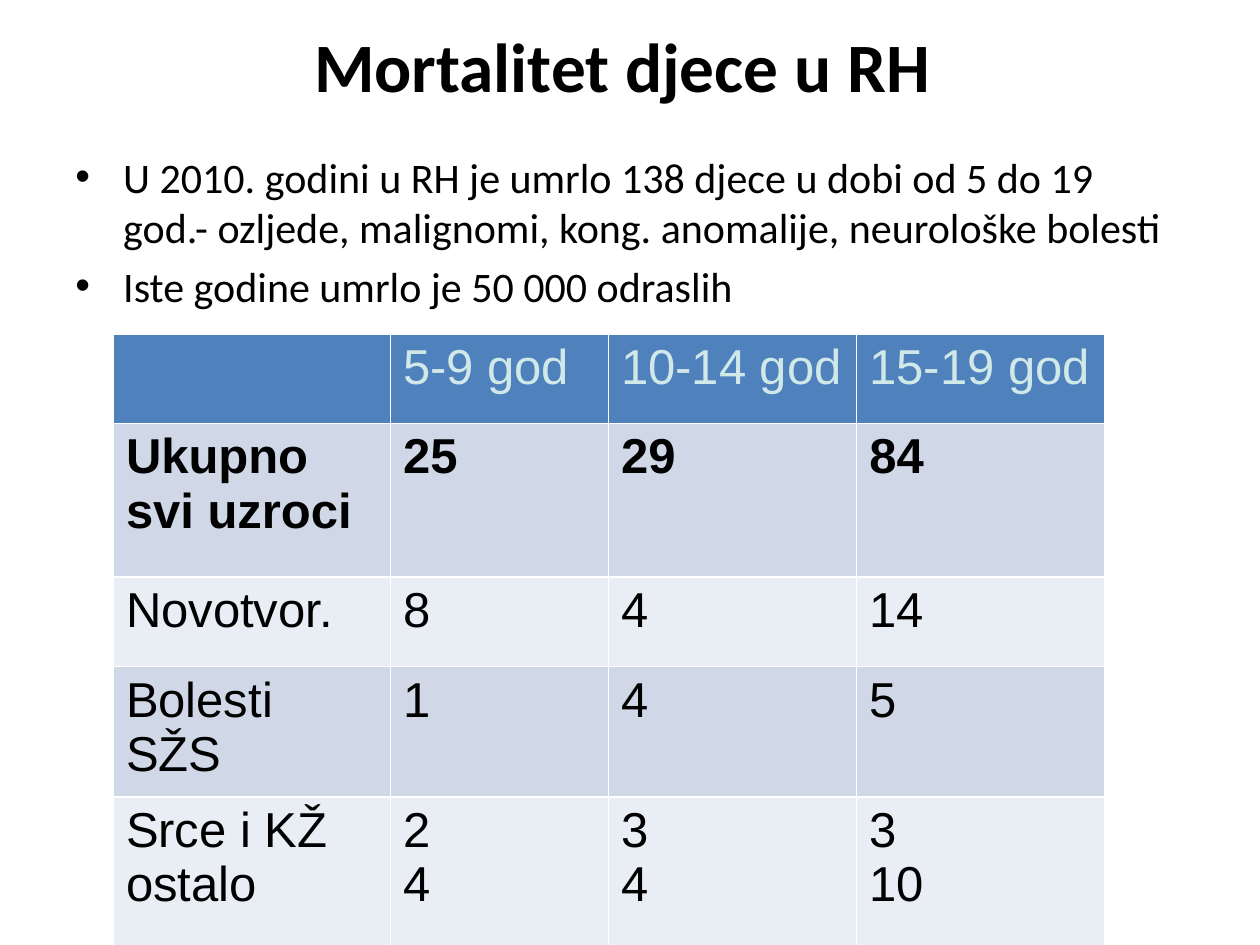
from pptx import Presentation
from pptx.dml.color import RGBColor
from pptx.enum.text import MSO_ANCHOR, PP_ALIGN
from pptx.oxml.ns import qn
from pptx.util import Inches, Pt
from lxml import etree

MIDDLE = MSO_ANCHOR.MIDDLE
CENTER = PP_ALIGN.CENTER

BLACK = RGBColor(0x00, 0x00, 0x00)
WHITE = RGBColor(0xFF, 0xFF, 0xFF)
PALE_TEAL = RGBColor(0xD0, 0xE8, 0xE8)
HEADER_BLUE = RGBColor(0x4F, 0x81, 0xBD)
BAND_COLORS = (RGBColor(0xD0, 0xD8, 0xE8), RGBColor(0xE9, 0xED, 0xF4))

TITLE_FORMAT = {"name": "Calibri", "size": Pt(39.6), "bold": True}
BODY_FORMAT = {"name": "Calibri", "size": Pt(24), "bold": False}
CELL_FORMAT = {"name": "Arial", "size": Pt(28), "bold": False}
TOTAL_FORMAT = {**CELL_FORMAT, "bold": True}

BULLETS = (
    "U 2010. godini u RH je umrlo 138 djece u dobi od 5 do 19 god.- ozljede, "
    "malignomi, kong. anomalije, neurološke bolesti",
    "Iste godine umrlo je 50 000 odraslih",
)
COLUMN_WIDTHS = (2.2, 1.73, 1.97, 1.97)
ROW_HEIGHTS = (0.71, 1.22, 0.71, 0.71, 1.22)
MORTALITY_ROWS = (
    ("", "5-9 god", "10-14 god", "15-19 god"),
    ("Ukupno svi uzroci", "25", "29", "84"),
    ("Novotvor.", "8", "4", "14"),
    ("Bolesti SŽS", "1", "4", "5"),
    ("Srce i KŽ\nostalo", "2\n4", "3\n4", "3\n10"),
)


def format_font(font, values, color):
    for name, value in values.items():
        setattr(font, name, value)
    font.color.rgb = color


def write_paragraphs(text_frame, lines, values, color):
    text_frame.text = "\n".join(lines)
    for paragraph in text_frame.paragraphs:
        format_font(paragraph.font, values, color)
        for run in paragraph.runs:
            format_font(run.font, values, color)


def add_text_area(slide, box, lines, values):
    shape = slide.shapes.add_textbox(*map(Inches, box))
    text_frame = shape.text_frame
    text_frame.word_wrap = True
    write_paragraphs(text_frame, lines, values, BLACK)
    return text_frame


def add_title(slide, box):
    text_frame = add_text_area(slide, box, ("Mortalitet djece u RH ",), TITLE_FORMAT)
    text_frame.vertical_anchor = MIDDLE
    text_frame.paragraphs[0].alignment = CENTER


def add_bullets(slide, box):
    text_frame = add_text_area(slide, box, BULLETS, BODY_FORMAT)
    for paragraph in text_frame.paragraphs:
        paragraph.space_before = Pt(4.8)
        properties = paragraph._p.get_or_add_pPr()
        properties.set("marL", str(Inches(0.38)))
        properties.set("indent", str(Inches(-0.38)))
        bullet_font = etree.Element(qn("a:buFont"), typeface="Arial")
        bullet = etree.Element(qn("a:buChar"), char="•")
        position = properties.index(properties.find(qn("a:defRPr")))
        properties.insert(position, bullet_font)
        properties.insert(position + 1, bullet)


def add_mortality_table(slide, box):
    frame = slide.shapes.add_table(
        len(ROW_HEIGHTS), len(COLUMN_WIDTHS), *map(Inches, box)
    )
    table = frame.table
    for column, width in zip(table.columns, COLUMN_WIDTHS):
        column.width = Inches(width)
    for row_index, (row, height) in enumerate(zip(table.rows, ROW_HEIGHTS)):
        row.height = Inches(height)
        is_header = row_index == 0
        fill_color = HEADER_BLUE if is_header else BAND_COLORS[(row_index - 1) % 2]
        text_color = PALE_TEAL if is_header else BLACK
        values = TOTAL_FORMAT if row_index == 1 else CELL_FORMAT
        for cell, text in zip(row.cells, MORTALITY_ROWS[row_index]):
            cell.fill.solid()
            cell.fill.fore_color.rgb = fill_color
            write_paragraphs(cell.text_frame, text.split("\n"), values, text_color)


def main():
    presentation = Presentation()
    presentation.slide_width = Inches(10)
    presentation.slide_height = Inches(7.5)
    slide = presentation.slides.add_slide(presentation.slide_layouts[6])
    slide.background.fill.solid()
    slide.background.fill.fore_color.rgb = WHITE
    add_title(slide, (0.5, 0.13, 9, 0.77))
    add_bullets(slide, (0.5, 1.15, 9, 1.73))
    add_mortality_table(slide, (0.9, 2.65, 7.87, 4.57))
    presentation.save("out.pptx")


if __name__ == "__main__":
    main()
